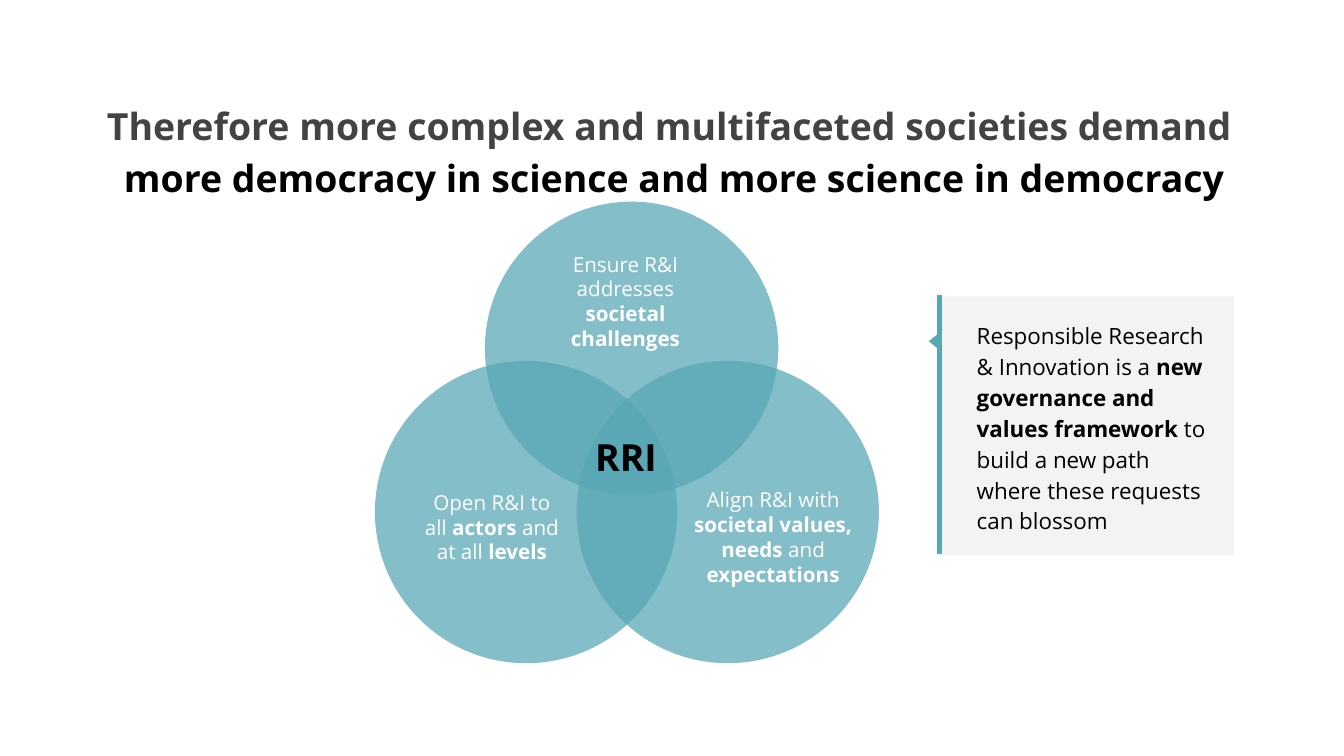
"""Build a slide on responsible research and innovation with three overlapping circles."""
import dataclasses

import lxml.etree
import pptx
import pptx.dml.color
import pptx.enum.shapes
import pptx.enum.text
import pptx.oxml.ns
import pptx.util

SLIDE_WIDTH = pptx.util.Inches(13.33)
SLIDE_HEIGHT = pptx.util.Inches(7.5)
COLUMN = SLIDE_WIDTH / 100
ROW = SLIDE_HEIGHT / 100
FONT = "Open Sans"
INSET = pptx.util.Inches(0.13)

TEAL = pptx.dml.color.RGBColor(0x57, 0xA7, 0xB5)
PALE_GREY = pptx.dml.color.RGBColor(0xF3, 0xF3, 0xF3)
DARK_GREY = pptx.dml.color.RGBColor(0x43, 0x43, 0x43)
BLACK = pptx.dml.color.RGBColor(0x00, 0x00, 0x00)
WHITE = pptx.dml.color.RGBColor(0xFF, 0xFF, 0xFF)

SHAPES = pptx.enum.shapes.MSO_SHAPE
ALIGN = pptx.enum.text.PP_ALIGN
ANCHOR = pptx.enum.text.MSO_ANCHOR


@dataclasses.dataclass(frozen=True)
class Area:
    left: float
    top: float
    width: float
    height: float

    def lengths(self) -> tuple[int, int, int, int]:
        return (round(self.left * COLUMN), round(self.top * ROW),
                round(self.width * COLUMN), round(self.height * ROW))


@dataclasses.dataclass(frozen=True)
class Run:
    text: str
    bold: bool = False
    color: pptx.dml.color.RGBColor | None = None


@dataclasses.dataclass(frozen=True)
class Label:
    area: Area
    paragraphs: list[list[Run]]
    size: float = 14.7
    color: pptx.dml.color.RGBColor = WHITE
    align: ALIGN = ALIGN.CENTER
    anchor: ANCHOR = ANCHOR.MIDDLE
    line_spacing: float = 1.0


@dataclasses.dataclass(frozen=True)
class Figure:
    kind: SHAPES
    area: Area
    color: pptx.dml.color.RGBColor = TEAL
    opacity: int = 100
    rotation: int = 0


TITLE = Label(
    Area(3, 11.07, 94.43, 10.4),
    [[Run("Therefore more complex and multifaceted societies demand ", True, DARK_GREY)],
     [Run("more democracy in science and more science in democracy", True)]],
    size=26.7, color=BLACK, anchor=ANCHOR.TOP, line_spacing=1.15)

CIRCLES = [
    Figure(SHAPES.OVAL, Area(36.08, 26.67, 21.83, 38.8), opacity=73),
    Figure(SHAPES.OVAL, Area(27.9, 47.73, 22.5, 40), opacity=73),
    Figure(SHAPES.OVAL, Area(42.9, 47.73, 22.5, 40), opacity=73),
]

CIRCLE_LABELS = [
    Label(Area(50.63, 63.07, 13.8, 15.87),
          [[Run("Align R&I with "), Run("societal values, needs ", True),
            Run("and "), Run("expectations", True)]]),
    Label(Area(29.7, 63.07, 13.8, 19.73),
          [[Run("Open R&I to")],
           [Run("all "), Run("actors ", True), Run("and")],
           [Run("at all "), Run("levels", True)]],
          anchor=ANCHOR.TOP),
    Label(Area(42.53, 57.33, 8.1, 6), [[Run("RRI", True)]], size=26.7, color=BLACK),
    Label(Area(39.3, 30.4, 14.48, 18.8),
          [[Run("Ensure R&I addresses "), Run("societal challenges", True)]]),
]

PANEL = Figure(SHAPES.RECTANGLE, Area(69.98, 39.2, 21.83, 34.27), PALE_GREY)
PANEL_EDGE = Area(69.9, 39.07, 0, 34.27)
PANEL_POINTER = Figure(SHAPES.ISOSCELES_TRIANGLE, Area(68.85, 44.4, 1.35, 1.47), rotation=270)
PANEL_LABEL = Label(
    Area(71.7, 39.47, 19.28, 33.87),
    [[Run("Responsible Research & Innovation is a "),
      Run("new governance and values framework", True),
      Run(" to build a new path where these requests can blossom")]],
    size=16, color=BLACK, align=ALIGN.LEFT, line_spacing=1.15)


def draw_figure(slide: pptx.slide.Slide, figure: Figure) -> None:
    shape = slide.shapes.add_shape(figure.kind, *figure.area.lengths())
    shape.shadow.inherit = False
    shape.rotation = figure.rotation
    shape.line.fill.background()
    shape.fill.solid()
    shape.fill.fore_color.rgb = figure.color
    if figure.opacity < 100:
        color = shape.fill._xPr.find(".//" + pptx.oxml.ns.qn("a:srgbClr"))
        alpha = lxml.etree.SubElement(color, pptx.oxml.ns.qn("a:alpha"))
        alpha.set("val", str(figure.opacity * 1000))


def draw_label(slide: pptx.slide.Slide, label: Label) -> None:
    frame = slide.shapes.add_textbox(*label.area.lengths()).text_frame
    frame.word_wrap = True
    frame.vertical_anchor = label.anchor
    frame.margin_left = frame.margin_right = INSET
    frame.margin_top = frame.margin_bottom = INSET
    for index, runs in enumerate(label.paragraphs):
        paragraph = frame.add_paragraph() if index else frame.paragraphs[0]
        paragraph.alignment = label.align
        paragraph.line_spacing = label.line_spacing
        for part in runs:
            run = paragraph.add_run()
            run.text = part.text
            run.font.name = FONT
            run.font.size = pptx.util.Pt(label.size)
            run.font.bold = part.bold
            run.font.color.rgb = part.color or label.color


def draw_edge(slide: pptx.slide.Slide, area: Area) -> None:
    left, top, width, height = area.lengths()
    connector = slide.shapes.add_connector(
        pptx.enum.shapes.MSO_CONNECTOR.STRAIGHT, left, top + height, left + width, top)
    connector.line.color.rgb = TEAL
    connector.line.width = pptx.util.Pt(3)
    lxml.etree.SubElement(connector._element.spPr, pptx.oxml.ns.qn("a:effectLst"))


def main() -> None:
    presentation = pptx.Presentation()
    presentation.slide_width = SLIDE_WIDTH
    presentation.slide_height = SLIDE_HEIGHT
    slide = presentation.slides.add_slide(presentation.slide_layouts[6])
    draw_label(slide, TITLE)
    for circle in CIRCLES:
        draw_figure(slide, circle)
    for label in CIRCLE_LABELS:
        draw_label(slide, label)
    draw_figure(slide, PANEL)
    draw_edge(slide, PANEL_EDGE)
    draw_label(slide, PANEL_LABEL)
    draw_figure(slide, PANEL_POINTER)
    presentation.save("out.pptx")


if __name__ == "__main__":
    main()
